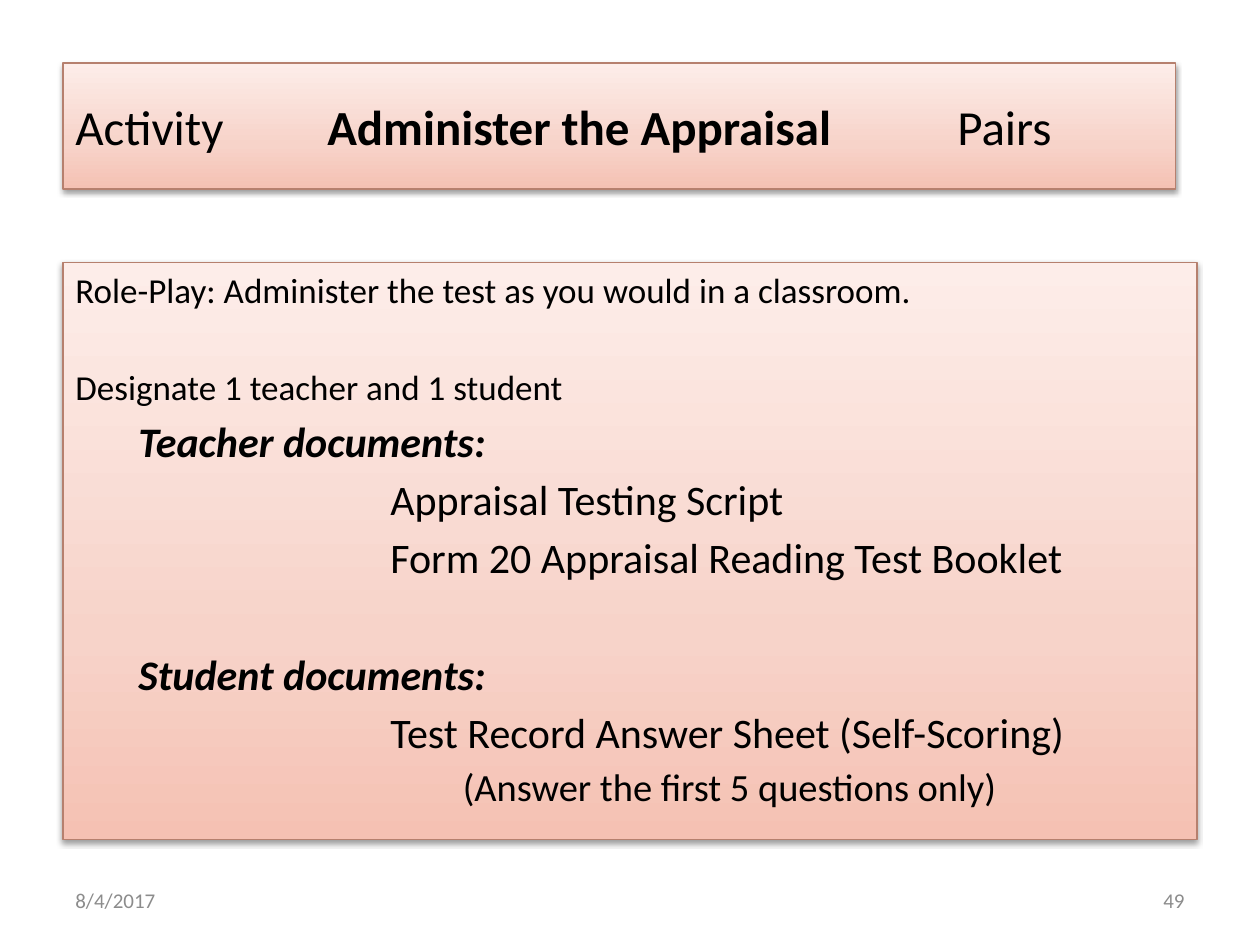
from lxml.etree import SubElement
from copy import deepcopy
from pptx import Presentation
from pptx.dml.color import RGBColor
from pptx.enum.shapes import MSO_SHAPE
from pptx.enum.text import MSO_ANCHOR, PP_ALIGN
from pptx.oxml.ns import qn
from pptx.util import Cm, Pt


def rgb(value):
    return RGBColor.from_string(value)


class ActivitySlide:
    font = "Calibri"
    ink, muted, border = "000000", "8C8C8C", "B6806E"
    stops = [(0, "F5C1B3"), (0.35, "F7D3C9"), (1, "FDEDE9")]

    def __init__(self, prs):
        self.s = prs.slides.add_slide(prs.slide_layouts[6])

    def panel(self, x, y, w, h, anchor):
        """Gradient box with a thin border and a soft shadow below it."""
        sp = self.s.shapes.add_shape(MSO_SHAPE.RECTANGLE, Cm(x), Cm(y), Cm(w), Cm(h))
        sp.fill.gradient()
        sp.fill.gradient_angle = 90
        gs_list = sp._element.spPr.find(".//" + qn("a:gsLst"))
        gs_list.append(deepcopy(gs_list[0]))
        for stop, (position, color) in zip(sp.fill.gradient_stops, self.stops):
            stop.position = position
            stop.color.rgb = rgb(color)
        sp.line.color.rgb = rgb(self.border)
        sp.line.width = Pt(0.75)
        self.shadow(sp)
        tf = sp.text_frame
        tf.word_wrap = True
        tf.vertical_anchor = anchor
        return tf

    def shadow(self, sp):
        sp.shadow.inherit = False
        effects = sp._element.spPr.find(qn("a:effectLst"))
        outer = SubElement(effects, qn("a:outerShdw"), blurRad=str(Pt(3.1)),
                           dist=str(Pt(1.6)), dir="5400000", rotWithShape="0")
        color = SubElement(outer, qn("a:srgbClr"), val="000000")
        SubElement(color, qn("a:alpha"), val="38000")

    def style(self, p, size, color=ink, bold=None, align=PP_ALIGN.LEFT):
        p.alignment = align
        f = p.font
        f.name, f.size, f.bold = self.font, Pt(size), bold
        f.color.rgb = rgb(color)

    def heading(self, tf, parts, tabs):
        """One line of (text, bold) parts set on tab stops."""
        p = tf.paragraphs[0]
        tab_list = SubElement(p._p.get_or_add_pPr(), qn("a:tabLst"))
        for pos in tabs:
            SubElement(tab_list, qn("a:tab"), pos=str(Cm(pos)), algn="l")
        self.style(p, 28)
        for text, bold in parts:
            r = p.add_run()
            r.text = text
            r.font.bold = bold

    def lines(self, tf, rows):
        """Rows of (text, size, indent, space before, strong)."""
        for i, (text, size, indent, before, strong) in enumerate(rows):
            p = tf.add_paragraph() if i else tf.paragraphs[0]
            p.text = text
            p._p.get_or_add_pPr().set("marL", str(Cm(indent)))
            p.space_before = Pt(before)
            self.style(p, size, bold=strong)
            p.font.italic = strong

    def footer(self, text, x, align):
        sp = self.s.shapes.add_textbox(Cm(x), Cm(17.65), Cm(5.93), Cm(1.01))
        tf = sp.text_frame
        tf.word_wrap = True
        tf.vertical_anchor = MSO_ANCHOR.MIDDLE
        p = tf.paragraphs[0]
        p.text = text
        self.style(p, 12, self.muted, align=align)


def main():
    prs = Presentation()
    prs.slide_width, prs.slide_height = Cm(25.4), Cm(19.05)
    slide = ActivitySlide(prs)

    # Title bar
    title = slide.panel(1.27, 1.27, 22.43, 2.54, MSO_ANCHOR.MIDDLE)
    slide.heading(title, [("Activity\t", False), ("Administer the Appraisal", True),
                          ("\tPairs", False)], tabs=[5.08, 17.78])

    # Instructions
    label, item, note = 1.27, 6.35, 7.81
    body = slide.panel(1.27, 5.29, 22.86, 11.63, MSO_ANCHOR.TOP)
    slide.lines(body, [
        ("Role-Play: Administer the test as you would in a classroom.", 20, 0, 0, False),
        ("Designate 1 teacher and 1 student", 20, 0, 31.5, False),
        ("Teacher documents:", 24, label, 4.3, True),
        ("Appraisal Testing Script", 24, item, 4.3, False),
        ("Form 20 Appraisal Reading Test Booklet", 24, item, 4.3, False),
        ("Student documents:", 24, label, 38, True),
        ("Test Record Answer Sheet (Self-Scoring)", 24, item, 4.3, False),
        ("(Answer the first 5 questions only)", 22, note, 4, False),
    ])

    # Date and slide number
    slide.footer("8/4/2017", 1.27, PP_ALIGN.LEFT)
    slide.footer("49", 18.2, PP_ALIGN.RIGHT)

    prs.save("out.pptx")


if __name__ == "__main__":
    main()
